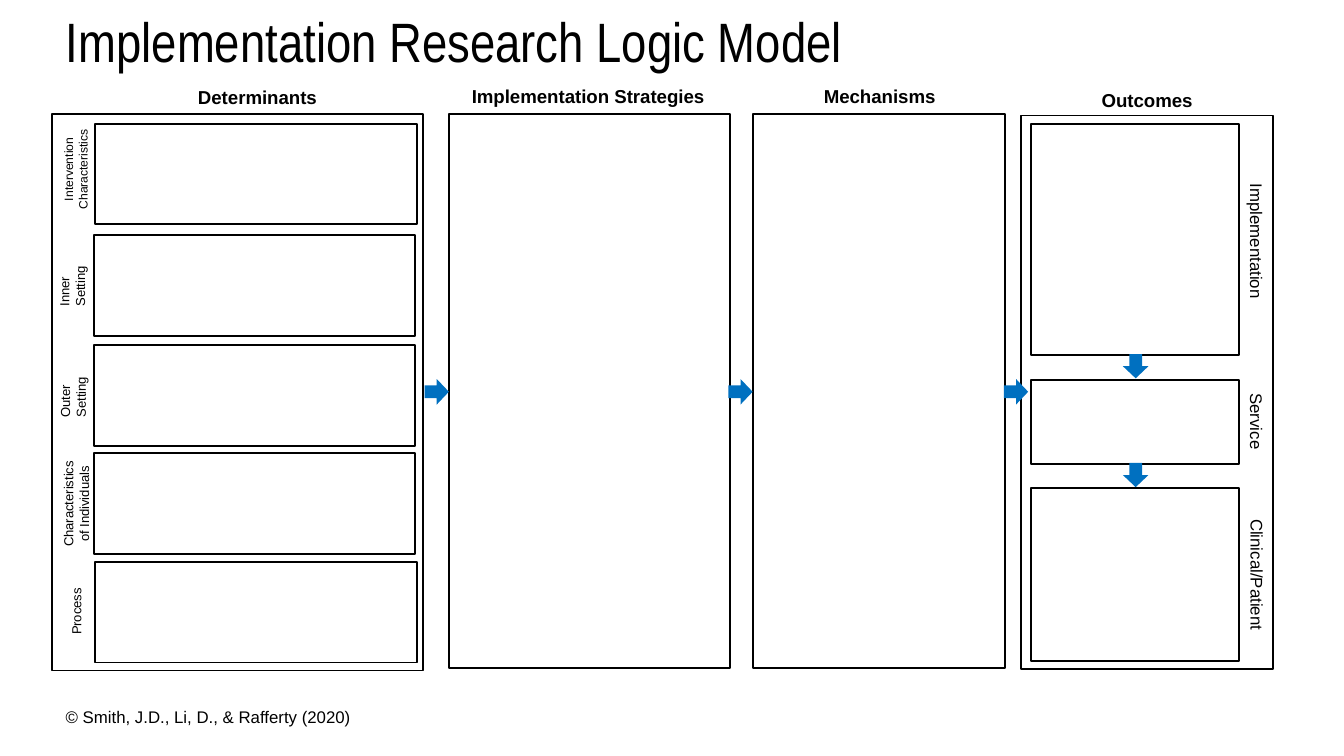
from pptx import Presentation
from pptx.dml.color import RGBColor
from pptx.enum import shapes, text
from pptx.util import Pt

PX = 9144  # 100 px to the inch
HUE = {"ink": "000000", "arrow": "0070C0"}
ALIGN = text.PP_ALIGN

prs = Presentation()
prs.slide_width = 1000 * PX
prs.slide_height = prs.slide_width * 9 // 16
slide = prs.slides.add_slide(prs.slide_layouts[5])


def write(words, box, size, bold=False, align=ALIGN.CENTER, turn=0,
          inset=10, wrap=True, font="Arial", shape=None):
    """Put words in a text box, or in the shape given."""
    x, y, w, h = [n * PX for n in box]
    shape = shape or slide.shapes.add_textbox(x, y, w, h)
    shape.left, shape.top, shape.width, shape.height = x, y, w, h
    shape.rotation = turn
    frame = shape.text_frame
    frame.word_wrap = wrap
    frame.margin_left = inset * PX
    frame.text = words
    para = frame.paragraphs[0]
    para.alignment = align
    face = para.runs[0].font
    face.name, face.size, face.bold = font, Pt(size), bold
    face.color.rgb = RGBColor.from_string(HUE["ink"])
    return para


def draw(kind, box, fill=None, turn=0):
    """Draw a filled shape without a line, or an outline without a fill."""
    shape = slide.shapes.add_shape(kind, *[n * PX for n in box])
    shape.shadow.inherit = False
    shape.rotation = turn
    if fill:
        shape.fill.solid()
        shape.fill.fore_color.rgb = RGBColor.from_string(HUE[fill])
        shape.line.fill.background()
    else:
        shape.fill.background()
        shape.line.color.rgb = RGBColor.from_string(HUE["ink"])
        shape.line.width = Pt(1)


RECT = shapes.MSO_SHAPE.RECTANGLE
ARROW = shapes.MSO_SHAPE.RIGHT_ARROW

# Title
title = slide.shapes.title
para = write("Implementation Research Logic Model", (39, 10, 862, 46), 29.7,
             align=ALIGN.LEFT, font="Arial Narrow", shape=title)
para.line_spacing = 0.9
title.text_frame.vertical_anchor = text.MSO_ANCHOR.MIDDLE
title.text_frame.auto_size = text.MSO_AUTO_SIZE.NONE

# Four columns: heading box and frame
columns = [
    ("Determinants", (98, 59, 187, 27), (39, 85, 276, 414)),
    ("Implementation Strategies", (338, 58, 199, 27), (334, 85, 209, 412)),
    ("Mechanisms", (561, 58, 187, 27), (560, 85, 188, 412)),
    ("Outcomes", (760, 61, 187, 27), (760, 86, 187, 412)),
]
for name, head, frame in columns:
    write(name, head, 10, bold=True)
    draw(RECT, frame)

# Arrows between columns
for x in (316, 542, 747):
    draw(ARROW, (x, 282, 18, 19), fill="arrow")

# Determinants: box corner, then label
domains = [
    (71, 92, "Intervention Characteristics", (15, 110, 83, 32), 6.5, {}),
    (70, 175, "Inner Setting", (12, 195, 84, 34), 7,
     {"align": ALIGN.LEFT, "inset": 26}),
    (70, 257, "Outer Setting", (12, 277, 85, 34), 7,
     {"align": ALIGN.LEFT, "inset": 26}),
    (70, 337, "Characteristics of Individuals", (10, 358, 94, 34), 7, {}),
    (71, 418, "Process", (20, 444, 74, 22), 7, {}),
]
for x, y, name, box, size, form in domains:
    draw(RECT, (x, y, 239, 75))
    write(name, box, size, turn=270, **form)

# Outcomes: boxes with labels turned about the same axis
for name, y, h, mid in [("Implementation", 92, 172, 179),
                        ("Service", 283, 62, 313),
                        ("Clinical/Patient", 363, 129, 427)]:
    draw(RECT, (767, y, 155, h))
    write(name, (935 - h // 2, mid - 12, h, 25), 9, turn=90)

# Arrows between outcomes
for y in (263, 344):
    draw(ARROW, (836, y, 18, 19), fill="arrow", turn=90)

# Credit line
write("© Smith, J.D., Li, D., & Rafferty (2020)", (39, 521, 234, 25), 9,
      align=ALIGN.LEFT, wrap=False)

prs.save("out.pptx")
